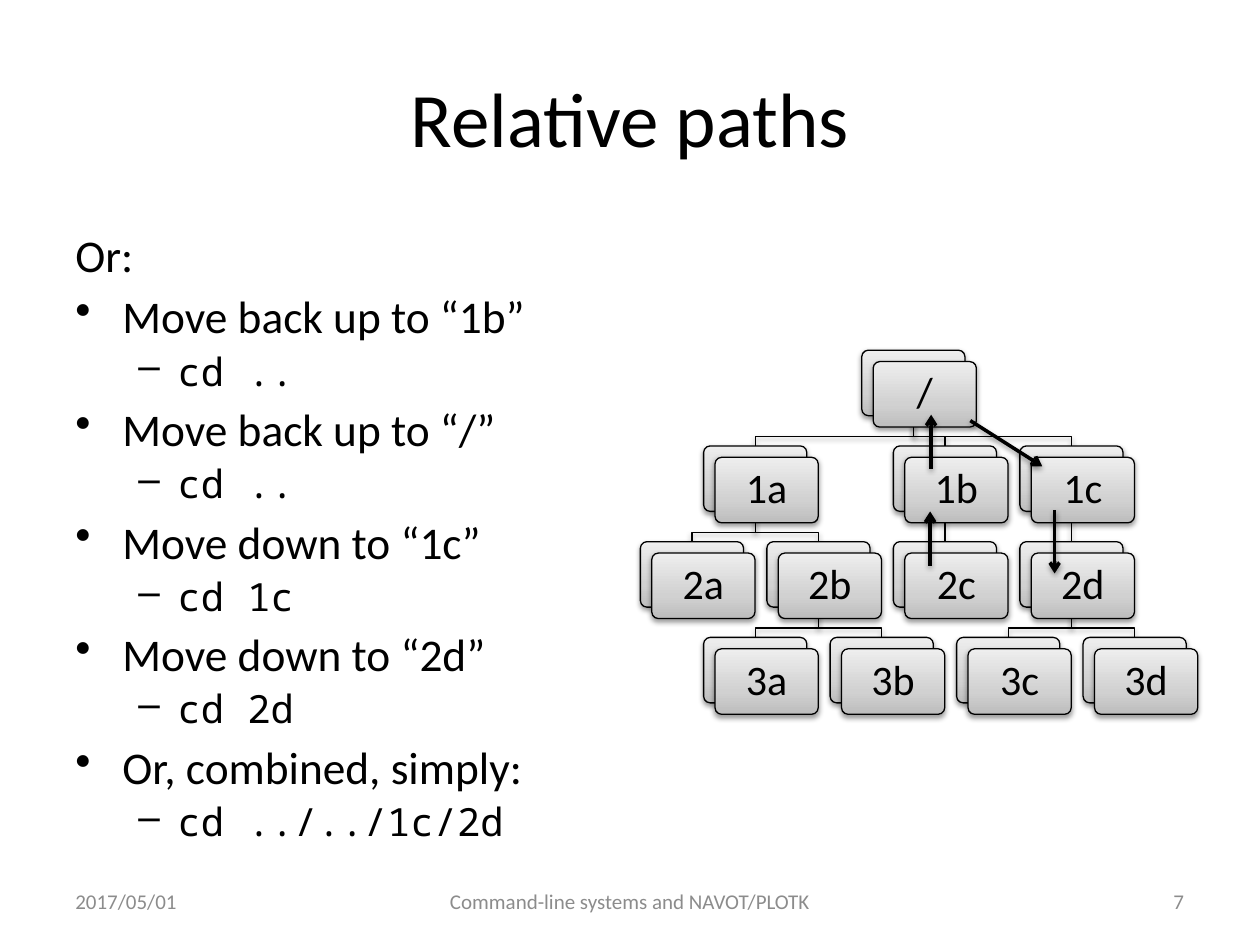
from copy import deepcopy
from dataclasses import dataclass

from lxml.etree import SubElement
from pptx import Presentation
from pptx.dml.color import RGBColor
from pptx.enum.shapes import MSO_CONNECTOR as Link, MSO_SHAPE as Preset
from pptx.enum.text import MSO_ANCHOR as Anchor, PP_ALIGN as Align
from pptx.oxml.ns import qn
from pptx.util import Cm, Pt


@dataclass(frozen=True)
class Theme:
    ink: str = "000000"
    muted: str = "8C8C8C"
    card_stops: tuple = ((0, "BDBDBD"), (0.35, "D1D1D1"), (1, "EEEEEE"))
    sans: str = "Calibri"
    mono: str = "Noto Sans Mono"
    title: float = 44
    step: float = 25.9
    command: float = 22.2
    node: float = 24
    footer: float = 12
    link_width: float = 0.75
    arrow_width: float = 2


THEME = Theme()

TREE_LEFT, TREE_TOP = 12.91, 7.06
COLUMN, ROW = 2.55, 1.93
CARD_WIDTH, CARD_HEIGHT, CARD_SHIFT = 2.08, 1.32, 0.23
BEND = 0.42

NODES = {
    "/": (1.75, 0, None),
    "1a": (0.5, 1, "/"),
    "2a": (0, 2, "1a"),
    "2b": (1, 2, "1a"),
    "3a": (0.5, 3, "2b"),
    "3b": (1.5, 3, "2b"),
    "1b": (2, 1, "/"),
    "2c": (2, 2, "1b"),
    "1c": (3, 1, "/"),
    "2d": (3, 2, "1c"),
    "3c": (2.5, 3, "2d"),
    "3d": (3.5, 3, "2d"),
}

MOVES = (
    (18.75, 11.4, 18.75, 10.31),
    (18.77, 9.45, 18.77, 8.36),
    (19.56, 8.48, 21.01, 9.4),
    (21.26, 10.29, 21.26, 11.56),
)

STEPS = (
    ("Move back up to “1b”", "cd .."),
    ("Move back up to “/”", "cd .."),
    ("Move down to “1c”", "cd 1c"),
    ("Move down to “2d”", "cd 2d"),
    ("Or, combined, simply:", "cd ../../1c/2d"),
)

FOOTERS = (
    ("2017/05/01", 1.27, 5.92, Align.LEFT),
    ("Command-line systems and NAVOT/PLOTK", 8.68, 8.04, Align.CENTER),
    ("7", 18.2, 5.92, Align.RIGHT),
)


def apply(target, values):
    for name, value in values.items():
        setattr(target, name, value)


def write(paragraph, text, size, font=THEME.sans, color=THEME.ink, **layout):
    run = paragraph.add_run()
    run.text = text
    apply(run.font, {"name": font, "size": Pt(size)})
    run.font.color.rgb = RGBColor.from_string(color)
    apply(paragraph, layout)


def set_bullet(paragraph, mark, margin, hanging):
    properties = paragraph._p.get_or_add_pPr()
    properties.set("marL", str(Cm(margin)))
    properties.set("indent", str(-Cm(hanging)))
    SubElement(properties, qn("a:buChar"), char=mark)


def add_text_area(slide, left, top, width, height, anchor):
    area = slide.shapes.add_textbox(Cm(left), Cm(top), Cm(width), Cm(height))
    apply(area.text_frame, {"word_wrap": True, "vertical_anchor": anchor})
    return area.text_frame


def set_outline(shape, width):
    shape.line.color.rgb = RGBColor.from_string(THEME.ink)
    shape.line.width = Pt(width)


def add_shadow(shape):
    effects = SubElement(shape.element.spPr, qn("a:effectLst"))
    shadow = SubElement(effects, qn("a:outerShdw"), blurRad=str(Pt(3.1)),
                        dist=str(Pt(1.6)), dir="5400000", rotWithShape="0")
    tint = SubElement(shadow, qn("a:srgbClr"), val=THEME.ink)
    SubElement(tint, qn("a:alpha"), val="38000")


def add_straight(slide, start_x, start_y, end_x, end_y, width):
    line = slide.shapes.add_connector(
        Link.STRAIGHT, Cm(start_x), Cm(start_y), Cm(end_x), Cm(end_y))
    set_outline(line, width)
    add_shadow(line)
    return line


def add_move_arrow(slide, move):
    arrow = add_straight(slide, *move, THEME.arrow_width)
    SubElement(arrow.line._get_or_add_ln(), qn("a:tailEnd"), type="arrow")


def card_corner(column, row):
    return TREE_LEFT + column * COLUMN, TREE_TOP + row * ROW


def add_branch(slide, parent, child):
    parent_left, parent_top = card_corner(*parent)
    child_left, child_top = card_corner(*child)
    start_x, end_x = parent_left + CARD_WIDTH / 2, child_left + CARD_WIDTH / 2
    start_y = parent_top + CARD_HEIGHT
    if start_x == end_x:
        add_straight(slide, start_x, start_y, end_x, child_top, THEME.link_width)
        return
    bend_y = start_y + BEND
    corners = ((start_x, bend_y), (end_x, bend_y), (end_x, child_top))
    outline = slide.shapes.build_freeform(Cm(start_x), Cm(start_y))
    outline.add_line_segments([(Cm(x), Cm(y)) for x, y in corners], close=False)
    branch = outline.convert_to_shape()
    branch.fill.background()
    set_outline(branch, THEME.link_width)
    add_shadow(branch)


def add_card(slide, left, top):
    card = slide.shapes.add_shape(Preset.ROUNDED_RECTANGLE, Cm(left), Cm(top),
                                  Cm(CARD_WIDTH), Cm(CARD_HEIGHT))
    card.adjustments[0] = 0.1
    card.fill.gradient()
    card.fill.gradient_angle = 90
    stops = card.element.spPr.find(".//" + qn("a:gsLst"))
    stops.insert(1, deepcopy(stops[0]))
    for stop, (position, color) in zip(card.fill.gradient_stops, THEME.card_stops):
        stop.position = position
        stop.color.rgb = RGBColor.from_string(color)
    set_outline(card, THEME.link_width)
    add_shadow(card)
    return card


def add_node(slide, label, column, row):
    left, top = card_corner(column, row)
    add_card(slide, left, top)
    front = add_card(slide, left + CARD_SHIFT, top + CARD_SHIFT).text_frame
    sides = ("left", "top", "right", "bottom")
    apply(front, {f"margin_{side}": Cm(0.25) for side in sides})
    apply(front, {"word_wrap": True, "vertical_anchor": Anchor.MIDDLE})
    write(front.paragraphs[0], label, THEME.node,
          alignment=Align.CENTER, line_spacing=0.9)


def add_title(slide, text):
    title = slide.shapes.title
    apply(title, {"left": Cm(1.27), "top": Cm(0.76),
                  "width": Cm(22.86), "height": Cm(3.18)})
    title.text_frame.vertical_anchor = Anchor.MIDDLE
    write(title.text_frame.paragraphs[0], text, THEME.title, alignment=Align.CENTER)


def add_steps(slide):
    body = add_text_area(slide, 1.27, 4.45, 11.23, 12.57, Anchor.TOP)
    write(body.paragraphs[0], "Or:", THEME.step, space_before=Pt(4.2))
    for step, command in STEPS:
        action = body.add_paragraph()
        write(action, step, THEME.step, space_before=Pt(4.2))
        set_bullet(action, "•", 0.95, 0.95)
        entry = body.add_paragraph()
        write(entry, command, THEME.command, THEME.mono,
              level=1, space_before=Pt(2.4))
        set_bullet(entry, "–", 2.06, 0.79)


def add_tree(slide):
    for column, row, parent in NODES.values():
        if parent:
            add_branch(slide, NODES[parent][:2], (column, row))
    for label, (column, row, _) in NODES.items():
        add_node(slide, label, column, row)


def main():
    deck = Presentation()
    apply(deck, {"slide_width": Cm(25.4), "slide_height": Cm(19.05)})
    slide = deck.slides.add_slide(deck.slide_layouts.get_by_name("Title Only"))
    add_title(slide, "Relative paths")
    add_steps(slide)
    add_tree(slide)
    for move in MOVES:
        add_move_arrow(slide, move)
    for text, left, width, alignment in FOOTERS:
        footer = add_text_area(slide, left, 17.65, width, 1.02, Anchor.MIDDLE)
        write(footer.paragraphs[0], text, THEME.footer, color=THEME.muted,
              alignment=alignment)
    deck.save("out.pptx")


if __name__ == "__main__":
    main()
